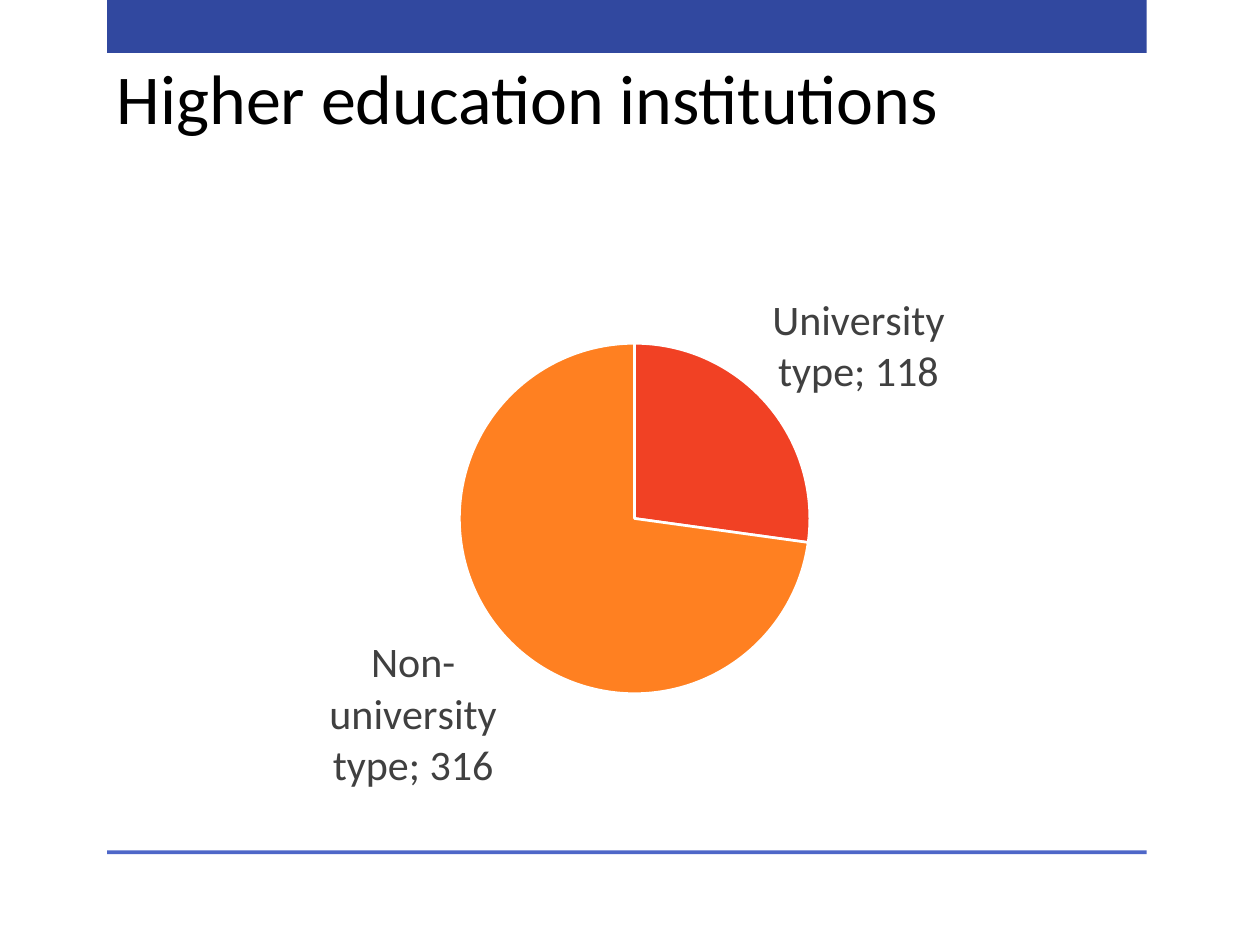
from lxml import etree
from pptx import Presentation
from pptx.chart.data import CategoryChartData
from pptx.dml.color import RGBColor
from pptx.enum.chart import XL_CHART_TYPE as ChartType, XL_LABEL_POSITION as LabelPosition
from pptx.enum.shapes import MSO_SHAPE as Shape
from pptx.enum.text import MSO_ANCHOR as Anchor
from pptx.oxml import parse_xml
from pptx.oxml.ns import nsdecls
from pptx.util import Inches, Pt

TITLE = "Higher education institutions"
INSTITUTIONS = {"University type": 118, "Non-university type": 316}
FONT = "Calibri"
COLORS = {
    "band": "31489F", "rule": "4E67C8", "text": "000000", "label": "404040",
    "edge": "FFFFFF", "slices": ["F14124", "FF8021"],
}
BARS = [("band", 0, 0.42), ("rule", 6.75, 0.03)]  # colour, top, height
BAR_LEFT, BAR_WIDTH = 0.85, 8.25
TITLE_BOX = (0.83, 0.13, 7.42, 1.02)
CHART_BOX = (0.83, 1.7, 8.25, 4.88)
PIE_BOX = {"x": 0.34, "y": 0.21, "w": 0.34, "h": 0.57}  # share of the chart area


def rgb(name):
    return RGBColor.from_string(COLORS.get(name, name))


def inches(box):
    return [Inches(length) for length in box]


def set_font(font, size, color):
    for name, value in {"name": FONT, "size": Pt(size), "bold": False}.items():
        setattr(font, name, value)
    font.color.rgb = rgb(color)


def add_bar(slide, color, top, height):
    bar = slide.shapes.add_shape(
        Shape.RECTANGLE, *inches((BAR_LEFT, top, BAR_WIDTH, height)))
    bar.shadow.inherit = False
    bar.fill.solid()
    bar.fill.fore_color.rgb = rgb(color)
    bar.line.fill.background()


def add_title(slide):
    frame = slide.shapes.add_textbox(*inches(TITLE_BOX)).text_frame
    frame.word_wrap = True
    frame.vertical_anchor = Anchor.BOTTOM
    paragraph = frame.paragraphs[0]
    paragraph.text = TITLE
    set_font(paragraph.font, 40, "text")


def place_pie(chart):
    """Fix the inner plot area to PIE_BOX."""
    plot_area = chart.element.chart.plotArea
    for layout in plot_area.findall("{*}layout"):
        plot_area.remove(layout)
    settings = {"layoutTarget": "inner", "xMode": "edge", "yMode": "edge", **PIE_BOX}
    layout = parse_xml(f"<c:layout {nsdecls('c')}><c:manualLayout/></c:layout>")
    for name, value in settings.items():
        tag = etree.QName(layout).namespace
        etree.SubElement(layout[0], f"{{{tag}}}{name}").set("val", str(value))
    plot_area.insert(0, layout)


def add_pie(slide):
    data = CategoryChartData()
    data.categories = list(INSTITUTIONS)
    data.add_series("Series 1", list(INSTITUTIONS.values()))
    chart = slide.shapes.add_chart(ChartType.PIE, *inches(CHART_BOX), data).chart
    chart.has_title = False
    chart.has_legend = False
    set_font(chart.font, 10, "text")
    place_pie(chart)

    plot = chart.plots[0]
    plot.vary_by_categories = True
    for index, color in enumerate(COLORS["slices"]):
        point = plot.series[0].points[index].format
        point.fill.solid()
        point.fill.fore_color.rgb = rgb(color)
        point.line.color.rgb = rgb("edge")
        point.line.width = Pt(1.5)

    plot.has_data_labels = True
    labels = plot.data_labels
    formats = {"show_value": True, "show_category_name": True,
               "show_percentage": False, "position": LabelPosition.OUTSIDE_END}
    for name, value in formats.items():
        setattr(labels, name, value)
    set_font(labels.font, 24, "label")
    separator = parse_xml(f"<c:separator {nsdecls('c')}>; </c:separator>")
    labels._element.find("{*}showBubbleSize").addnext(separator)


def main():
    presentation = Presentation()
    presentation.slide_width, presentation.slide_height = inches((10, 7.5))
    slide = presentation.slides.add_slide(presentation.slide_layouts[6])
    for bar in BARS:
        add_bar(slide, *bar)
    add_title(slide)
    add_pie(slide)
    presentation.save("out.pptx")


if __name__ == "__main__":
    main()
